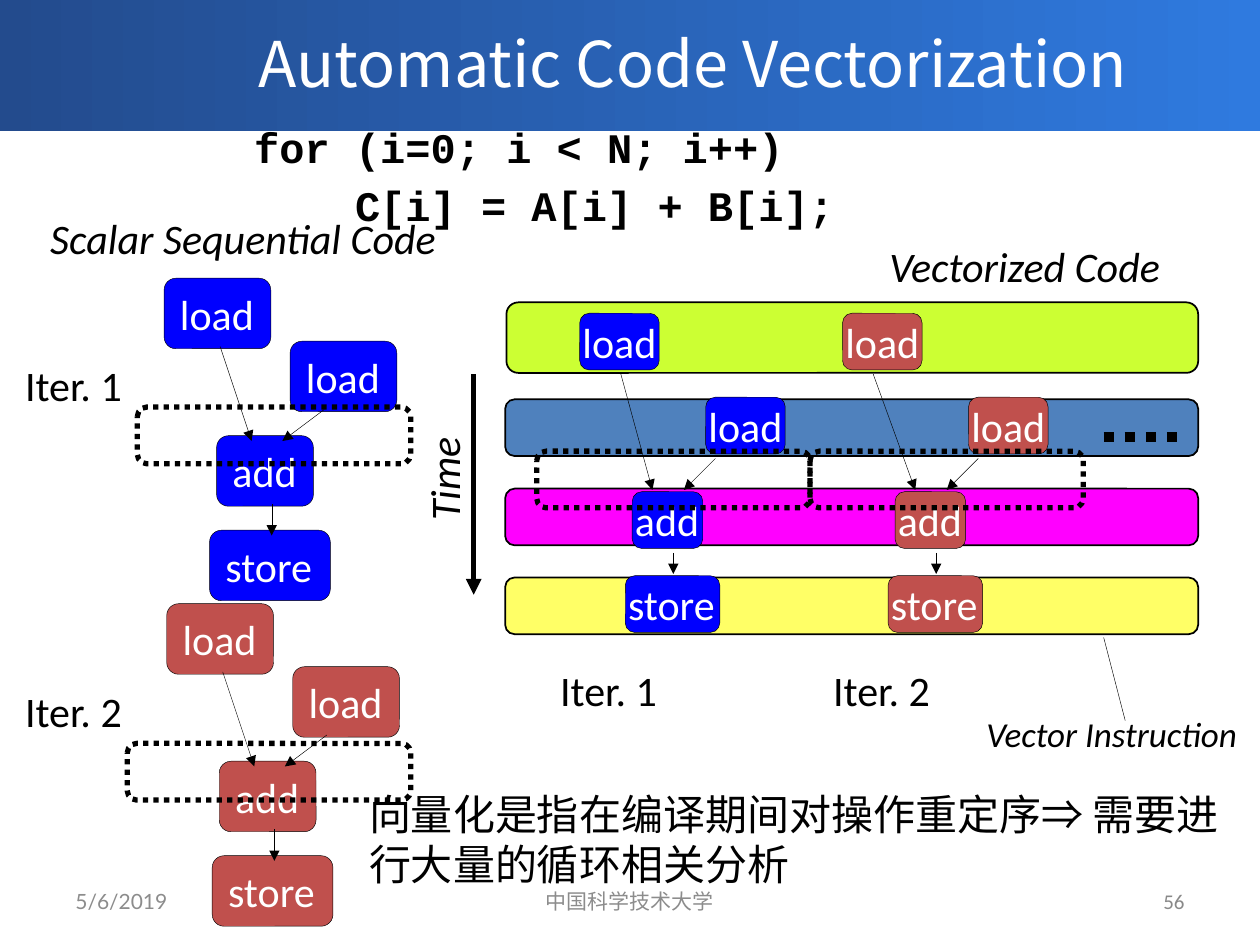
from lxml.etree import SubElement
from pptx import Presentation
from pptx.dml.color import RGBColor
from pptx.enum.dml import MSO_LINE
from pptx.enum.shapes import MSO_CONNECTOR, MSO_SHAPE
from pptx.enum.text import MSO_ANCHOR, PP_ALIGN
from pptx.oxml.ns import qn
from pptx.util import Pt

BLUE, RED, BLACK, WHITE, GREY = "0000FF", "C0504D", "000000", "FFFFFF", "8C8C8C"
CJK = "Noto Sans CJK SC"


def color(hex_text):
    return RGBColor.from_string(hex_text)


def write(shape, text, size=24, font="Calibri", ink=BLACK, bold=False, italic=False,
          align=PP_ALIGN.LEFT, anchor=MSO_ANCHOR.MIDDLE, wrap=False, inset=None, gap=0):
    """Fill a shape with text: a string, or a list of (text, font) spans; newlines part paragraphs."""
    frame = shape.text_frame
    frame.word_wrap = wrap
    frame.vertical_anchor = anchor
    if inset is not None:
        frame.margin_left = frame.margin_right = Pt(inset)
        frame.margin_top = frame.margin_bottom = Pt(inset)
    lines = [[(line, font)] for line in text.split("\n")] if isinstance(text, str) else [text]
    for index, spans in enumerate(lines):
        para = frame.add_paragraph() if index else frame.paragraphs[0]
        para.alignment = align
        if index:
            para.space_before = Pt(gap)
        for words, typeface in spans:
            span = para.add_run()
            span.text = words
            span.font.size = Pt(size)
            span.font.name = typeface
            span.font.bold = bold
            span.font.italic = italic
            span.font.color.rgb = color(ink)
            for tag in ("a:ea", "a:sym"):
                SubElement(span.font._element, qn(tag)).set("typeface", typeface)


def add_text(page, text, left, top, width, height, **style):
    box = page.shapes.add_textbox(Pt(left), Pt(top), Pt(width), Pt(height))
    write(box, text, **style)
    return box


def add_box(page, left, top, width, height, fill=None, weight=0.25, dotted=False):
    box = page.shapes.add_shape(MSO_SHAPE.ROUNDED_RECTANGLE,
                                Pt(left), Pt(top), Pt(width), Pt(height))
    box.shadow.inherit = False
    if fill:
        box.fill.solid()
        box.fill.fore_color.rgb = color(fill)
    else:
        box.fill.background()
    box.line.color.rgb = color(BLACK)
    box.line.width = Pt(weight)
    if dotted:
        box.line.dash_style = MSO_LINE.ROUND_DOT
    return box


def add_line(page, start, end, weight=0.25, arrow=True, dotted=False):
    line = page.shapes.add_connector(MSO_CONNECTOR.STRAIGHT, Pt(start[0]), Pt(start[1]),
                                     Pt(end[0]), Pt(end[1]))
    line.line.color.rgb = color(BLACK)
    line.line.width = Pt(weight)
    if dotted:
        line.line.dash_style = MSO_LINE.ROUND_DOT
    if arrow:
        SubElement(line.line._get_or_add_ln(), qn("a:tailEnd")).set("type", "triangle")
    SubElement(line._element.spPr, qn("a:effectLst"))


def add_iteration(page, left, top, fill, nodes, arrows, height, inset=None):
    """Draw the operations of one loop pass, placed relative to its first load."""
    for label, x, y, width in nodes:
        box = add_box(page, left + x, top + y, width, height, fill)
        write(box, label, ink=WHITE, inset=inset)
    for x1, y1, x2, y2 in arrows:
        add_line(page, (left + x1, top + y1), (left + x2, top + y2))


def add_header(page):
    banner = page.shapes.add_shape(MSO_SHAPE.RECTANGLE, Pt(0), Pt(-2), Pt(720), Pt(77))
    banner.shadow.inherit = False
    banner.line.fill.background()
    banner.fill.gradient()
    banner.fill.gradient_angle = 0
    for stop, shade, position in zip(banner.fill.gradient_stops, ("234B8D", "2F7ADF"), (0, 1)):
        stop.color.rgb = color(shade)
        stop.position = position
    title = page.shapes.title
    title.left, title.top, title.width, title.height = Pt(72), Pt(0), Pt(648), Pt(71)
    write(title, "Automatic Code Vectorization", size=36, font=CJK, ink=WHITE,
          align=PP_ALIGN.CENTER, wrap=True)
    title._element.addprevious(banner._element)


def add_footer(page):
    for text, left, width, align, font, ink in (
            ("5/6/2019", 36, 168, PP_ALIGN.LEFT, "Lato", GREY),
            ("中国科学技术大学", 246, 228, PP_ALIGN.CENTER, "Lato", GREY),
            ("56", 516, 168, PP_ALIGN.RIGHT, "Calibri", "898989")):
        add_text(page, text, left, 500.5, width, 29, size=12, font=font, ink=ink,
                 align=align, wrap=True)


def add_scalar_code(page):
    nodes = (("load", 0, 0, 61), ("load", 72, 36, 61), ("add", 30, 90, 55.3), ("store", 26, 144, 69))
    arrows = ((32, 39, 50, 93), (91.5, 75, 67.5, 93), (61.5, 129, 61.5, 147))
    for number, left, top, fill in ((1, 93.8, 159, BLUE), (2, 95.3, 345, RED)):
        add_iteration(page, left, top, fill, nodes, arrows, 40.3)
        add_text(page, f"Iter. {number}", 7.2, top + 42.5, 70.6, 36.7)
    add_box(page, 78.5, 232.6, 156.2, 32.4, weight=3, dotted=True)
    add_box(page, 72.7, 424.8, 162, 32.4, weight=3, dotted=True)
    add_text(page, "Scalar Sequential Code", 21.6, 117.4, 243.4, 36.7, italic=True)


def add_vector_code(page):
    for left, top, width, height, fill in (
            (288.7, 228.2, 396, 32.4, "4F81BD"), (289.4, 172.8, 395.3, 40.3, "CCFF33"),
            (288.7, 279.2, 396, 32.4, "FF00FF"), (288.7, 330, 396, 32.4, "FFFF66")):
        add_box(page, left, top, width, height, fill, weight=1)
    add_text(page, "Vector Instruction", 556.6, 403.2, 165.6, 31.7, size=20, italic=True)

    nodes = (("load", 0, 0, 45.4), ("load", 72, 48, 45.4), ("add", 30, 102, 40.3), ("store", 26, 150, 54))
    shared_arrows = ((77.5, 83, 59.5, 101), (53.5, 137, 53.5, 149))
    for number, first_start, fill in ((1, 23.5, BLUE), (2, 17.5, RED)):
        step = number - 1
        left = 331.3 + 150.2 * step
        arrows = ((first_start, 34.8, 41.5, 101),) + shared_arrows
        add_iteration(page, left, 179, fill, nodes, arrows, 32.4, inset=0)
        add_box(page, 306.7 + 156.2 * step, 257.8, 156.2, 32.4, weight=3, dotted=True)
        add_text(page, f"Iter. {number}", 313 + 156 * step, 375.8, 77.8, 36.7, wrap=True)

    add_text(page, "Vectorized Code", 501.1, 133.2, 170.6, 36.7, italic=True)
    add_line(page, (630.7, 364.3), (643, 411.8), arrow=False)
    add_line(page, (270.7, 213.8), (270.7, 339.8), weight=3)
    time = add_text(page, "Time", 222.5, 254.9, 62.6, 36.7, italic=True, anchor=MSO_ANCHOR.TOP)
    time.rotation = 270
    add_line(page, (630.7, 249.8), (673.2, 249.8), weight=6, arrow=False, dotted=True)


def main():
    deck = Presentation()
    deck.slide_width, deck.slide_height = Pt(720), Pt(540)
    page = deck.slides.add_slide(deck.slide_layouts[5])
    add_header(page)
    add_footer(page)
    add_text(page, "for (i=0; i < N; i++)\n    C[i] = A[i] + B[i];", 138.2, 66.2, 348.5, 68.4,
             font="Courier New", bold=True, gap=4.8)
    add_scalar_code(page)
    add_text(page, [("向量化是指在编译期间对操作重定序", CJK), ("⇒ ", "Noto Sans CJK KR"),
                    ("需要进行大量的循环相关分析", CJK)], 203.8, 446.4, 516.2, 65.5, wrap=True)
    add_vector_code(page)
    deck.save("out.pptx")


if __name__ == "__main__":
    main()
